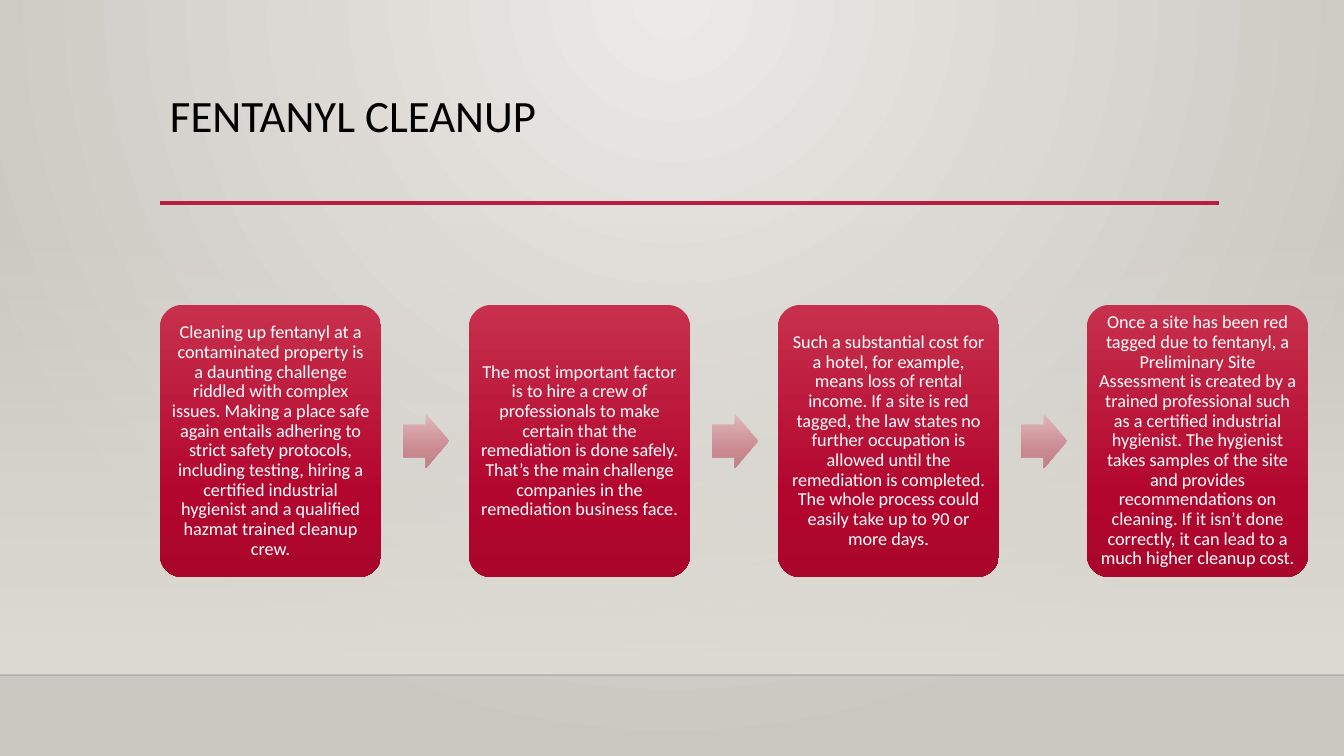
from pptx import Presentation
from pptx.dml.color import RGBColor
from pptx.enum.shapes import MSO_CONNECTOR, MSO_SHAPE
from pptx.enum.text import MSO_ANCHOR, PP_ALIGN
from pptx.oxml import parse_xml
from pptx.oxml.ns import nsdecls, qn
from pptx.util import Pt

STEPS = [
    "Cleaning up fentanyl at a contaminated property is a daunting challenge riddled with complex "
    "issues. Making a place safe again entails adhering to strict safety protocols, including testing, "
    "hiring a certified industrial hygienist and a qualified hazmat trained cleanup crew.",
    "The most important factor is to hire a crew of professionals to make certain that the remediation "
    "is done safely. That’s the main challenge companies in the remediation business face.",
    "Such a substantial cost for a hotel, for example, means loss of rental income. If a site is red "
    "tagged, the law states no further occupation is allowed until the remediation is completed. The "
    "whole process could easily take up to 90 or more days.",
    "Once a site has been red tagged due to fentanyl, a Preliminary Site Assessment is created by a "
    "trained professional such as a certified industrial hygienist. The hygienist takes samples of the "
    "site and provides recommendations on cleaning. If it isn’t done correctly, it can lead to a much "
    "higher cleanup cost.",
]
BACKDROP = [(0, "ECEAE7", 100), (100, "CAC7C1", 100)]
WALL = [(0, "DFDBD5", 0), (100, "DFDBD5", 100)]
CARD = [(0, "C7304C", 100), (69, "B3062F", 100), (100, "AA062C", 100)]
ARROW = [(0, "DFB7BB", 100), (69, "C9888E", 100), (100, "BE8288", 100)]
DOWNWARD = '<a:lin ang="5400000" scaled="0"/>'
FROM_TOP = '<a:path path="circle"><a:fillToRect l="43000" r="43000" b="100000"/></a:path>'


def px(length):
    return round(length * 914400 / 100.8)


def color(value):
    return RGBColor.from_string(value)


def apply(target, values):
    for name, value in values.items():
        setattr(target, name, value)


def paint_gradient(fill, holder, stops, direction):
    fill.background()
    marks = "".join(
        f'<a:gs pos="{position * 1000}"><a:srgbClr val="{value}">'
        f'<a:alpha val="{opacity * 1000}"/></a:srgbClr></a:gs>'
        for position, value, opacity in stops
    )
    gradient = parse_xml(
        f'<a:gradFill {nsdecls("a")} rotWithShape="1"><a:gsLst>{marks}</a:gsLst>{direction}</a:gradFill>'
    )
    holder.replace(holder.find(qn("a:noFill")), gradient)


class SlideBuilder:
    """Draws styled elements on the current slide."""

    font = "Calibri"

    def __init__(self, page):
        self.page = page

    def background(self, stops):
        fill = self.page.background.fill
        fill.background()
        holder = self.page.element.find(".//" + qn("p:bgPr"))
        paint_gradient(fill, holder, stops, FROM_TOP)

    def shape(self, kind, left, top, width, height, stops, adjustments=()):
        shape = self.page.shapes.add_shape(kind, px(left), px(top), px(width), px(height))
        shape.shadow.inherit = False
        shape.line.fill.background()
        paint_gradient(shape.fill, shape.element.spPr, stops, DOWNWARD)
        for index, value in enumerate(adjustments):
            shape.adjustments[index] = value
        return shape

    def rule(self, left, right, y, value, width, opacity=100):
        line = self.page.shapes.add_connector(MSO_CONNECTOR.STRAIGHT, px(left), px(y), px(right), px(y))
        line.line.width = Pt(width)
        line.line.color.rgb = color(value)
        properties = line.element.spPr
        tint = properties.find(".//" + qn("a:srgbClr"))
        tint.append(parse_xml(f'<a:alpha {nsdecls("a")} val="{opacity * 1000}"/>'))
        properties.append(parse_xml(f'<a:effectLst {nsdecls("a")}/>'))

    def label(self, box, text, size, value, align, anchor, margin_x, margin_y):
        frame = box.text_frame
        apply(frame, {
            "word_wrap": True, "vertical_anchor": anchor,
            "margin_left": px(margin_x), "margin_right": px(margin_x),
            "margin_top": px(margin_y), "margin_bottom": px(margin_y),
        })
        para = frame.paragraphs[0]
        apply(para, {"alignment": align, "line_spacing": 0.9})
        span = para.add_run()
        span.text = text
        apply(span.font, {"name": self.font, "size": Pt(size)})
        span.font.color.rgb = color(value)

    def title(self, text, left, top, width, height):
        box = self.page.shapes.add_textbox(px(left), px(top), px(width), px(height))
        self.label(box, text, 32, "000000", PP_ALIGN.LEFT, MSO_ANCHOR.TOP, 10, 5)

    def card(self, text, left, top, width, height):
        box = self.shape(MSO_SHAPE.ROUNDED_RECTANGLE, left, top, width, height, CARD, [0.1])
        self.label(box, text, 13, "FFFFFF", PP_ALIGN.CENTER, MSO_ANCHOR.MIDDLE, 5, 5)

    def arrow(self, left, top, width, height):
        self.shape(MSO_SHAPE.RIGHT_ARROW, left, top, width, height, ARROW, [0.6, 0.5])


def main():
    deck = Presentation()
    apply(deck, {"slide_width": px(1344), "slide_height": px(756)})
    builder = SlideBuilder(deck.slides.add_slide(deck.slide_layouts[6]))
    builder.background(BACKDROP)
    builder.shape(MSO_SHAPE.RECTANGLE, 0, 223, 1344, 452, WALL)
    builder.rule(0, 1344, 675, "000001", 1, 20)
    builder.rule(160, 1219, 203, "B71E42", 2.5)
    builder.title("FENTANYL CLEANUP", 160, 89, 1058, 116)
    for index, text in enumerate(STEPS):
        left = 160 + 309 * index
        builder.card(text, left, 305, 221, 272)
        if index < len(STEPS) - 1:
            builder.arrow(left + 243, 414, 46, 54)
    deck.save("out.pptx")


if __name__ == "__main__":
    main()
